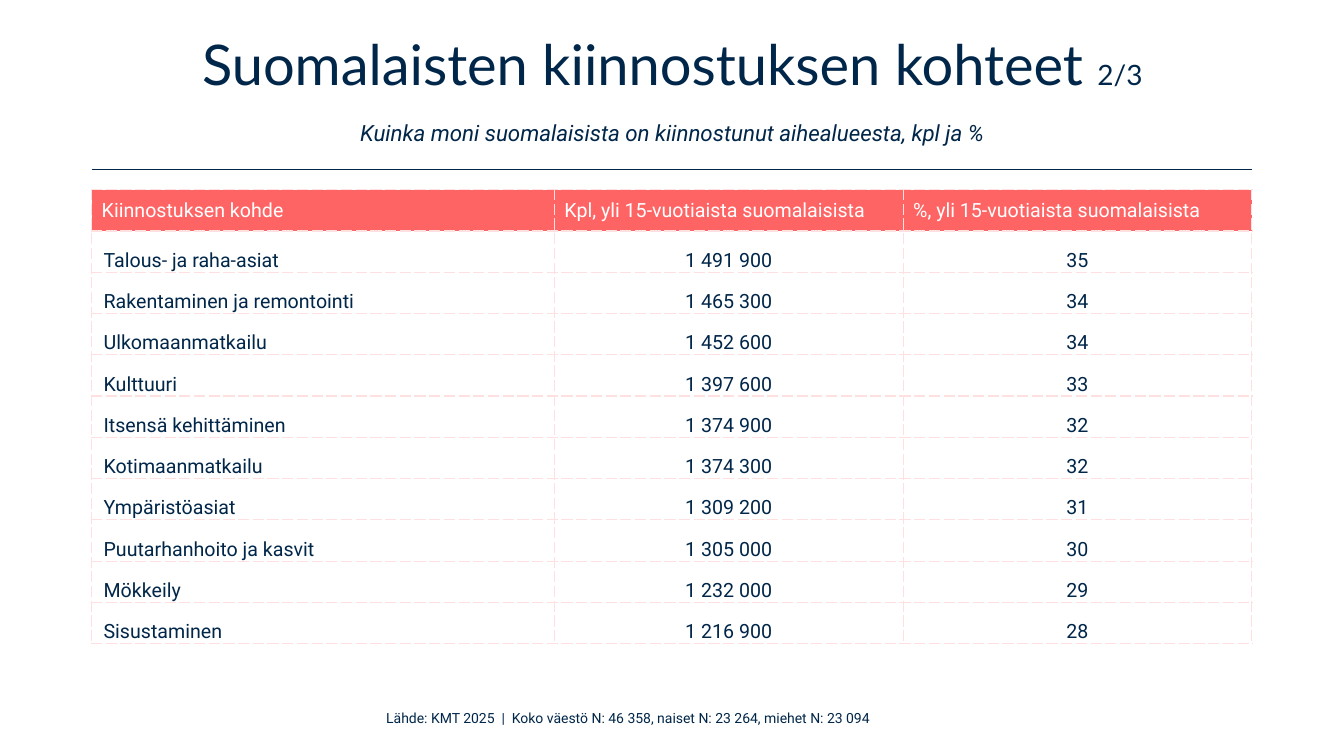
from lxml.etree import SubElement
from pptx import Presentation
from pptx.dml.color import RGBColor
from pptx.enum.shapes import MSO_CONNECTOR
from pptx.enum.text import MSO_ANCHOR, PP_ALIGN
from pptx.oxml.ns import qn
from pptx.util import Cm, Pt

colors = {"navy": "002649", "coral": "FF6464", "pink": "FFE0E0", "white": "FFFFFF"}

rows = [
    ("Kiinnostuksen kohde", "Kpl, yli 15-vuotiaista suomalaisista", "%, yli 15-vuotiaista suomalaisista"),
    ("Talous- ja raha-asiat", "1 491 900", "35"),
    ("Rakentaminen ja remontointi", "1 465 300", "34"),
    ("Ulkomaanmatkailu", "1 452 600", "34"),
    ("Kulttuuri", "1 397 600", "33"),
    ("Itsensä kehittäminen", "1 374 900", "32"),
    ("Kotimaanmatkailu", "1 374 300", "32"),
    ("Ympäristöasiat", "1 309 200", "31"),
    ("Puutarhanhoito ja kasvit", "1 305 000", "30"),
    ("Mökkeily", "1 232 000", "29"),
    ("Sisustaminen", "1 216 900", "28"),
]


def style(font, size, color, name="Roboto"):
    font.size = Pt(size)
    font.name = name
    font.color.rgb = RGBColor.from_string(colors[color])


def border(cell):
    props = cell._tc.get_or_add_tcPr()
    for side in ("lnL", "lnR", "lnT", "lnB"):
        edge = SubElement(props, qn(f"a:{side}"), w=str(Pt(1)))
        fill = SubElement(edge, qn("a:solidFill"))
        SubElement(fill, qn("a:srgbClr"), val=colors["pink"])
        SubElement(edge, qn("a:prstDash"), val="sysDash")


deck = Presentation()
deck.slide_width = Cm(33.87)
deck.slide_height = Cm(19.05)
slide = deck.slides.add_slide(deck.slide_layouts[6])

source = slide.shapes.add_textbox(Cm(7.62), Cm(17.75), Cm(16.41), Cm(0.69))
source.text_frame.word_wrap = True
para = source.text_frame.paragraphs[0]
para.text = "Lähde: KMT 2025  |  Koko väestö N: 46 358, naiset N: 23 264, miehet N: 23 094"
para.alignment = PP_ALIGN.CENTER
style(para.font, 10, "navy")

title = slide.shapes.add_textbox(Cm(2.34), Cm(1.07), Cm(29.21), Cm(2.72))
title.text_frame.word_wrap = True
title.text_frame.vertical_anchor = MSO_ANCHOR.MIDDLE
para = title.text_frame.paragraphs[0]
para.alignment = PP_ALIGN.CENTER
para.line_spacing = Pt(35)
for text, size in (("Suomalaisten kiinnostuksen kohteet ", 40), ("2/3", 20)):
    run = para.add_run()
    run.text = text
    style(run.font, size, "navy", "Lato")
para.add_line_break()
run = para.add_run()
run.text = "Kuinka moni suomalaisista on kiinnostunut aihealueesta, kpl ja %"
style(run.font, 16, "navy")
run.font.italic = True

rule = slide.shapes.add_connector(MSO_CONNECTOR.STRAIGHT, Cm(2.31), Cm(4.27), Cm(31.55), Cm(4.27))
rule.line.color.rgb = RGBColor.from_string(colors["navy"])
rule.line.width = Pt(1)
SubElement(rule._element.spPr, qn("a:effectLst"))

table = slide.shapes.add_table(len(rows), 3, Cm(2.31), Cm(4.78), Cm(29.24), Cm(11.44)).table
table.first_row = False
table.horz_banding = False
for col, width in zip(table.columns, (11.66, 8.79, 8.79)):
    col.width = Cm(width)
for r, texts in enumerate(rows):
    table.rows[r].height = Cm(1.04)
    for c, text in enumerate(texts):
        cell = table.cell(r, c)
        border(cell)
        para = cell.text_frame.paragraphs[0]
        para.text = text
        if r == 0:
            cell.vertical_anchor = MSO_ANCHOR.MIDDLE
            cell.fill.solid()
            cell.fill.fore_color.rgb = RGBColor.from_string(colors["coral"])
            style(para.font, 14, "white")
        else:
            cell.vertical_anchor = MSO_ANCHOR.BOTTOM
            cell.fill.background()
            cell.margin_left = Cm(0.03 if c else 0.3)
            cell.margin_top = cell.margin_right = Cm(0.03)
            cell.margin_bottom = Cm(0)
            para.alignment = PP_ALIGN.CENTER if c else PP_ALIGN.LEFT
            style(para.font, 14, "navy")

deck.save("out.pptx")
